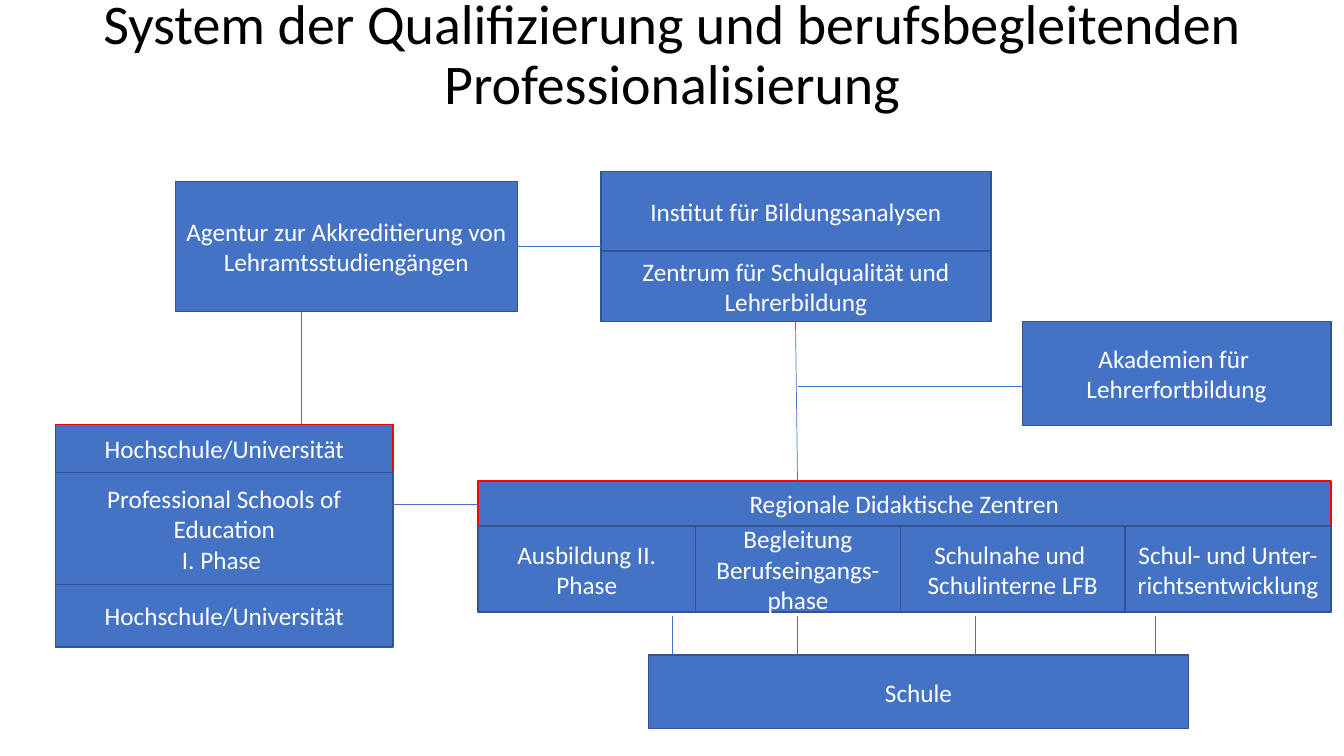
from pptx import Presentation
from pptx.dml.color import RGBColor
from pptx.enum.shapes import MSO_CONNECTOR, MSO_SHAPE
from pptx.enum.text import MSO_ANCHOR, MSO_AUTO_SIZE, PP_ALIGN
from pptx.oxml.ns import qn
from pptx.util import Inches, Pt

BLUE = RGBColor(0x44, 0x72, 0xC4)
DARK_BLUE = RGBColor(0x32, 0x54, 0x91)
RED = RGBColor(0xFF, 0x00, 0x00)
WHITE = RGBColor(0xFF, 0xFF, 0xFF)
BLACK = RGBColor(0x00, 0x00, 0x00)

RECTANGLE = MSO_SHAPE.RECTANGLE
STRAIGHT = MSO_CONNECTOR.STRAIGHT
MIDDLE = MSO_ANCHOR.MIDDLE
BOTTOM = MSO_ANCHOR.BOTTOM
CENTER = PP_ALIGN.CENTER
NO_AUTOFIT = MSO_AUTO_SIZE.NONE

FONT_NAME = "Calibri"
TITLE = "System der Qualifizierung und berufsbegleitenden Professionalisierung"
TITLE_ONLY_LAYOUT = 5

# Left, top, width, height, text
SINGLE_BOXES = [
    (1.74, 1.8, 3.39, 1.29, "Agentur zur Akkreditierung von\nLehramtsstudiengängen"),
    (10.14, 3.19, 3.06, 1.03, "Akademien für \vLehrerfortbildung"),
    (6.43, 6.5, 5.36, 0.73, "Schule"),
]

# Height, text, outline
INSTITUTE_STACK = [
    (0.79, "Institut für Bildungsanalysen", DARK_BLUE),
    (0.7, "Zentrum für Schulqualität und\nLehrerbildung", DARK_BLUE),
]
UNIVERSITY_STACK = [
    (0.48, "Hochschule/Universität", RED),
    (1.11, "Professional Schools of\nEducation\nI. Phase ", DARK_BLUE),
    (0.62, "Hochschule/Universität", DARK_BLUE),
]

# Width, text
REGIONAL_TASKS = [
    (2.16, "Ausbildung II. Phase"),
    (2.03, "Begleitung Berufseingangs- phase"),
    (2.23, "Schulnahe und \nSchulinterne LFB"),
    (2.04, "Schul- und Unter-\nrichtsentwicklung"),
]
REGIONAL_LEFT = 4.74
REGIONAL_TOP = 4.77
REGIONAL_HEADER_HEIGHT = 0.45
REGIONAL_TASK_HEIGHT = 0.85

# Start x, start y, end x, end y
LINKS = [
    (5.13, 2.44, 5.96, 2.44),
    (2.99, 3.1, 2.99, 4.21),
    (3.9, 5, 4.74, 5),
    (7.89, 3.19, 7.91, 4.77),
    (7.91, 3.83, 10.14, 3.83),
]
SCHOOL_LINK_POSITIONS = [6.67, 7.91, 9.67, 11.46]
SCHOOL_LINK_TOP = 6.11
SCHOOL_TOP = 6.5


def format_text(shape, text, size, color, anchor, line_spacing=1.0):
    frame = shape.text_frame
    frame.text = text
    frame_format = {
        "word_wrap": True,
        "auto_size": NO_AUTOFIT,
        "vertical_anchor": anchor,
    }
    for name, value in frame_format.items():
        setattr(frame, name, value)
    for paragraph in frame.paragraphs:
        paragraph.alignment = CENTER
        paragraph.line_spacing = line_spacing
        for name, value in {"name": FONT_NAME, "size": Pt(size)}.items():
            setattr(paragraph.font, name, value)
        paragraph.font.color.rgb = color


def set_title(slide):
    title = slide.shapes.title
    position = {"left": 0, "top": 0.1, "width": 13.33, "height": 1.11}
    for name, value in position.items():
        setattr(title, name, Inches(value))
    format_text(title, TITLE, 40, BLACK, BOTTOM, line_spacing=0.9)


def add_box(slide, left, top, width, height, text, outline=DARK_BLUE):
    shape = slide.shapes.add_shape(
        RECTANGLE, Inches(left), Inches(top), Inches(width), Inches(height)
    )
    shape.shadow.inherit = False
    shape.fill.solid()
    shape.fill.fore_color.rgb = BLUE
    shape.line.color.rgb = outline
    shape.line.width = Pt(1)
    format_text(shape, text, 18, WHITE, MIDDLE)


def add_stack(slide, left, top, width, boxes):
    """Place boxes of one width directly below each other."""
    for height, text, outline in boxes:
        add_box(slide, left, top, width, height, text, outline)
        top += height


def add_regional_centres(slide):
    total_width = sum(width for width, text in REGIONAL_TASKS)
    add_box(slide, REGIONAL_LEFT, REGIONAL_TOP, total_width,
            REGIONAL_HEADER_HEIGHT, "Regionale Didaktische Zentren", RED)
    left = REGIONAL_LEFT
    top = REGIONAL_TOP + REGIONAL_HEADER_HEIGHT
    for width, text in REGIONAL_TASKS:
        add_box(slide, left, top, width, REGIONAL_TASK_HEIGHT, text)
        left += width


def add_link(slide, start_x, start_y, end_x, end_y):
    connector = slide.shapes.add_connector(
        STRAIGHT, Inches(start_x), Inches(start_y), Inches(end_x), Inches(end_y)
    )
    connector.line.color.rgb = BLUE
    connector.line.width = Pt(0.5)
    properties = connector._element.spPr
    properties.append(properties.makeelement(qn("a:effectLst"), {}))


def main():
    presentation = Presentation()
    presentation.slide_width = Inches(13.33)
    presentation.slide_height = Inches(7.5)
    layout = presentation.slide_layouts[TITLE_ONLY_LAYOUT]
    slide = presentation.slides.add_slide(layout)

    set_title(slide)
    for box in SINGLE_BOXES:
        add_box(slide, *box)
    add_stack(slide, 5.96, 1.7, 3.87, INSTITUTE_STACK)
    add_regional_centres(slide)
    add_stack(slide, 0.55, 4.21, 3.35, UNIVERSITY_STACK)
    for link in LINKS:
        add_link(slide, *link)
    for x in SCHOOL_LINK_POSITIONS:
        add_link(slide, x, SCHOOL_LINK_TOP, x, SCHOOL_TOP)

    presentation.save("out.pptx")


if __name__ == "__main__":
    main()
